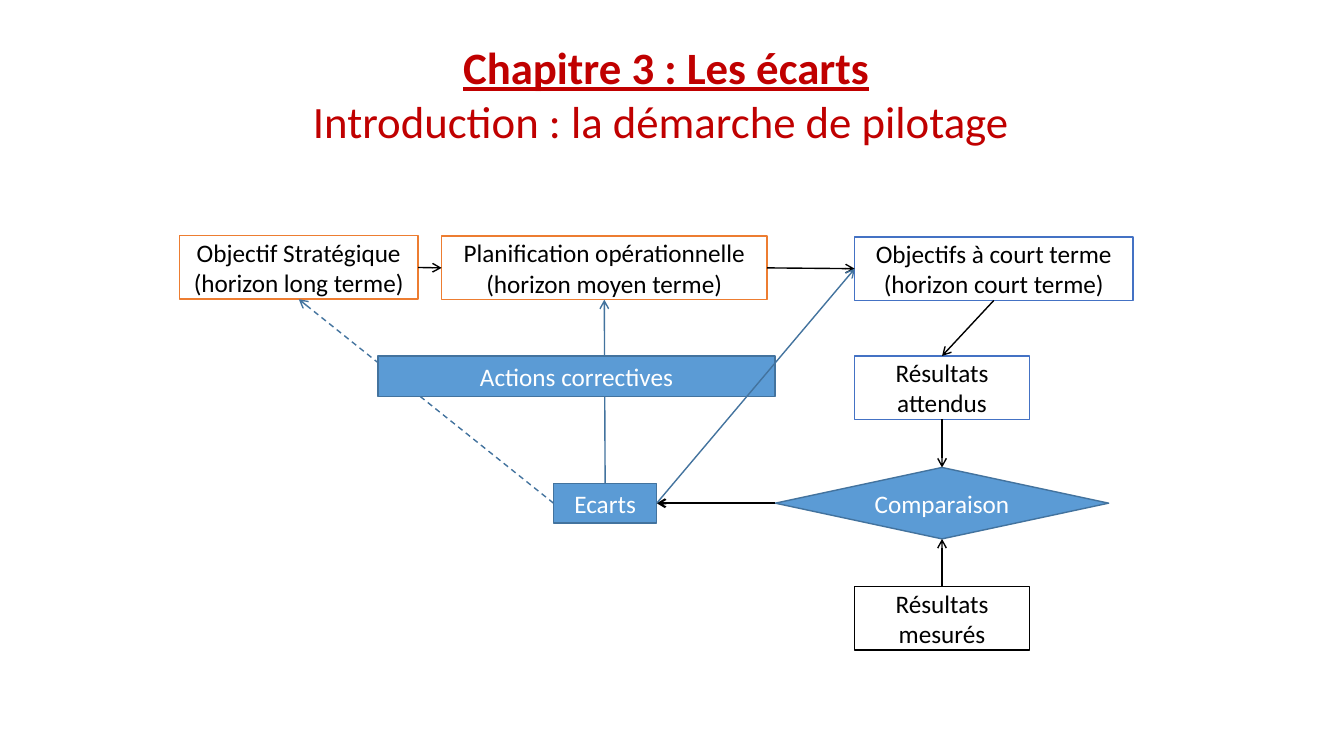
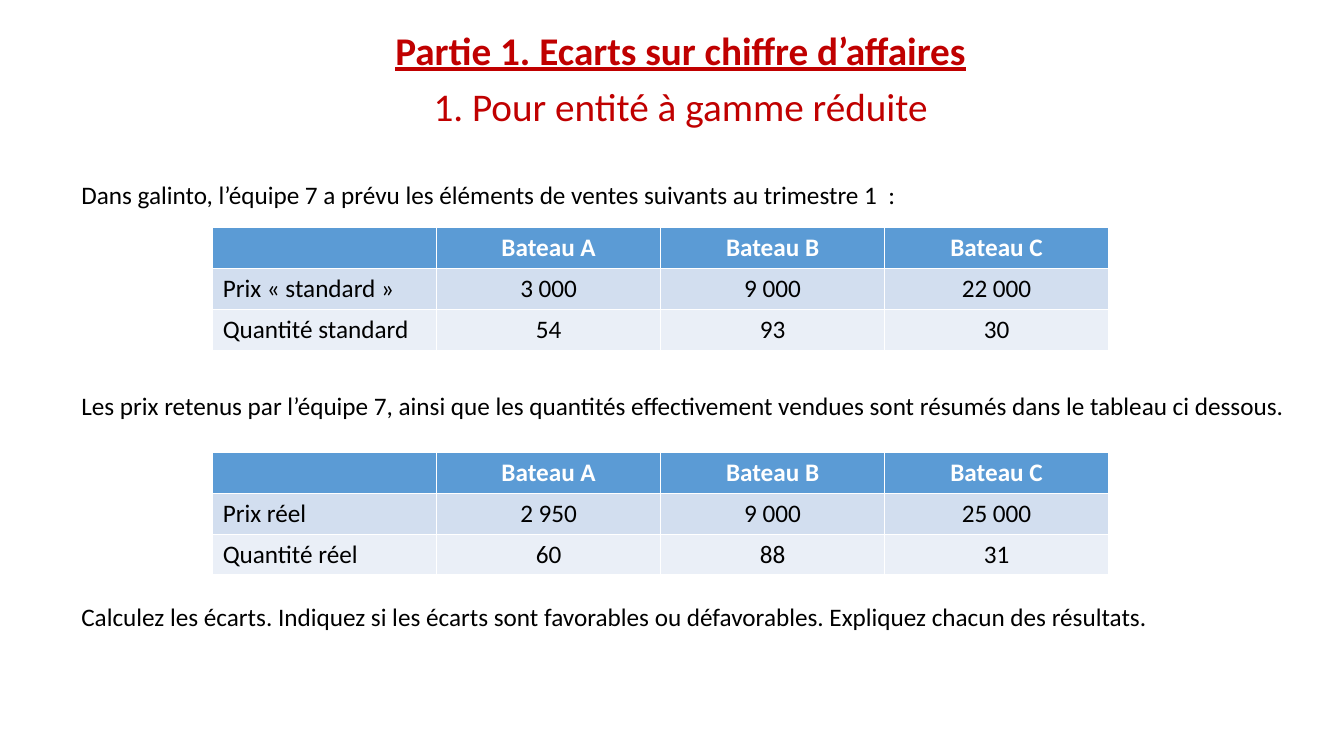
from lxml.etree import SubElement
from pptx import Presentation
from pptx.dml.color import RGBColor
from pptx.enum.dml import MSO_LINE_DASH_STYLE as Dash
from pptx.enum.shapes import MSO_CONNECTOR as Connector, MSO_SHAPE as Shape
from pptx.enum.text import MSO_ANCHOR as Anchor, MSO_AUTO_SIZE as AutoSize, PP_ALIGN as Align
from pptx.oxml.ns import qn
from pptx.util import Cm, Pt

FONT = "Calibri"
RED, BLACK, WHITE = "C00000", "000000", "FFFFFF"
BLUE, DARK_BLUE, OUTLINE_BLUE, ORANGE = "5B9BD5", "43739E", "4472C4", "ED7D31"
BAND_FILLS = ["D2DEEF", "EAEFF7"]
TOP, LEFT, BOTTOM, RIGHT = range(4)  # connection sites of a box


def color(hex_code):
    return RGBColor.from_string(hex_code)


def fill_solid(target, hex_code):
    target.fill.solid()
    target.fill.fore_color.rgb = color(hex_code)


def style(paragraph, hex_code=BLACK, size=18, bold=False, align=Align.CENTER):
    paragraph.alignment = align
    font = paragraph.font
    font.name, font.size, font.bold = FONT, Pt(size), bold
    font.color.rgb = color(hex_code)


def write_lines(frame, lines, **text_style):
    """Write one styled paragraph per line."""
    frame.text = "\n".join(lines)
    for paragraph in frame.paragraphs:
        style(paragraph, **text_style)


def add_titled_slide(deck, lines, place, size, anchor):
    """Add a slide with a bold, underlined heading above a plain subheading."""
    page = deck.slides.add_slide(deck.slide_layouts[5])
    title = page.shapes.title
    title.left, title.top, title.width, title.height = map(Cm, place)
    frame = title.text_frame
    write_lines(frame, lines, hex_code=RED, size=size)
    frame.auto_size = AutoSize.NONE
    frame.vertical_anchor = anchor
    heading = frame.paragraphs[0].font
    heading.bold = heading.underline = True
    return page


def add_box(page, place, lines, outline, fill=WHITE, kind=Shape.RECTANGLE):
    box = page.shapes.add_shape(kind, *map(Cm, place))
    box.shadow.inherit = False
    fill_solid(box, fill)
    box.line.color.rgb = color(outline)
    box.line.width = Pt(1)
    box.text_frame.vertical_anchor = Anchor.MIDDLE
    write_lines(box.text_frame, lines, hex_code=BLACK if fill == WHITE else WHITE)
    return box


def add_arrow(page, start, start_site, end, end_site, hex_code=BLACK, width=1, dash=None):
    arrow = page.shapes.add_connector(Connector.STRAIGHT, 0, 0, 0, 0)
    arrow.begin_connect(start, start_site)
    arrow.end_connect(end, end_site)
    line = arrow.line
    line.color.rgb = color(hex_code)
    line.width = Pt(width)
    if dash:
        line.dash_style = dash
    SubElement(line._get_or_add_ln(), qn("a:tailEnd"), type="arrow")
    SubElement(arrow._element.spPr, qn("a:effectLst"))


def add_sales_table(page, top, rows):
    header = ["", "Bateau A", "Bateau B", "Bateau C"]
    grid = [header, *rows]
    table = page.shapes.add_table(
        len(grid), len(header), Cm(5.36), Cm(top), Cm(22.58), Cm(3.09)).table
    for r, values in enumerate(grid):
        for c, value in enumerate(values):
            cell = table.cell(r, c)
            fill_solid(cell, BAND_FILLS[(r - 1) % 2] if r else BLUE)
            write_lines(cell.text_frame, [value], hex_code=BLACK if r else WHITE,
                        bold=r == 0, align=Align.CENTER if c else Align.LEFT)


def build_steering_slide(deck):
    page = add_titled_slide(
        deck, ["Chapitre 3 : Les écarts", "Introduction : la démarche de pilotage "],
        (5.36, 0.76, 22.86, 3.18), 32, Anchor.MIDDLE)
    strategy = add_box(page, (4.52, 5.94, 6.02, 1.6),
                       ["Objectif Stratégique", "(horizon long terme)"], ORANGE)
    planning = add_box(page, (11.13, 5.95, 8.2, 1.6),
                       ["Planification opérationnelle", "(horizon moyen terme)"], ORANGE)
    targets = add_box(page, (21.54, 5.97, 7.01, 1.6),
                      ["Objectifs à court terme", "(horizon court terme)"], OUTLINE_BLUE)
    expected = add_box(page, (21.54, 8.97, 4.4, 1.6), ["Résultats attendus"], OUTLINE_BLUE)
    comparison = add_box(page, (19.54, 11.78, 8.4, 1.8), ["Comparaison"],
                         DARK_BLUE, BLUE, Shape.FLOWCHART_DECISION)
    measured = add_box(page, (21.54, 14.78, 4.4, 1.6), ["Résultats mesurés"], BLACK)
    gaps = add_box(page, (13.95, 12.18, 2.6, 1), ["Ecarts"], DARK_BLUE, BLUE)

    add_arrow(page, strategy, RIGHT, planning, LEFT)
    add_arrow(page, planning, RIGHT, targets, LEFT)
    add_arrow(page, targets, BOTTOM, expected, TOP)
    add_arrow(page, expected, BOTTOM, comparison, TOP)
    add_arrow(page, measured, TOP, comparison, BOTTOM)
    add_arrow(page, comparison, LEFT, gaps, RIGHT, width=1.5)
    add_arrow(page, gaps, LEFT, strategy, BOTTOM, DARK_BLUE, dash=Dash.DASH)
    add_arrow(page, gaps, TOP, planning, BOTTOM, DARK_BLUE)
    add_box(page, (9.53, 8.97, 10, 1.02), ["Actions correctives"], DARK_BLUE, BLUE)
    add_arrow(page, gaps, RIGHT, targets, LEFT, DARK_BLUE)


def build_sales_slide(deck):
    page = add_titled_slide(
        deck, ["Partie 1. Ecarts sur chiffre d’affaires", "1. Pour entité à gamme réduite"],
        (4.45, 0.66, 25.4, 2.67), 28, Anchor.TOP)
    for paragraph in page.shapes.title.text_frame.paragraphs:
        paragraph.line_spacing = 0.9
        paragraph.space_before = Pt(10)

    frame = page.shapes.add_textbox(Cm(1.8), Cm(4.39), Cm(31.01), Cm(11.79)).text_frame
    frame.word_wrap = True
    write_lines(frame, [
        "Dans galinto, l’équipe 7 a prévu les éléments de ventes suivants au trimestre 1  :",
        "Les prix retenus par l’équipe 7, ainsi que les quantités effectivement vendues "
        "sont résumés dans le tableau ci dessous.",
        "Calculez les écarts. Indiquez si les écarts sont favorables ou défavorables. "
        "Expliquez chacun des résultats.",
    ], align=Align.LEFT)
    for paragraph in frame.paragraphs[:-1]:
        paragraph.space_after = Pt(129)  # leaves room for a table

    add_sales_table(page, 5.74, [["Prix « standard »", "3 000", "9 000", "22 000"],
                                 ["Quantité standard", "54", "93", "30"]])
    add_sales_table(page, 11.4, [["Prix réel", "2 950", "9 000", "25 000"],
                                 ["Quantité réel", "60", "88", "31"]])


def main():
    deck = Presentation()
    deck.slide_width, deck.slide_height = Cm(33.87), Cm(19.05)
    build_steering_slide(deck)
    build_sales_slide(deck)
    deck.save("out.pptx")


if __name__ == "__main__":
    main()
